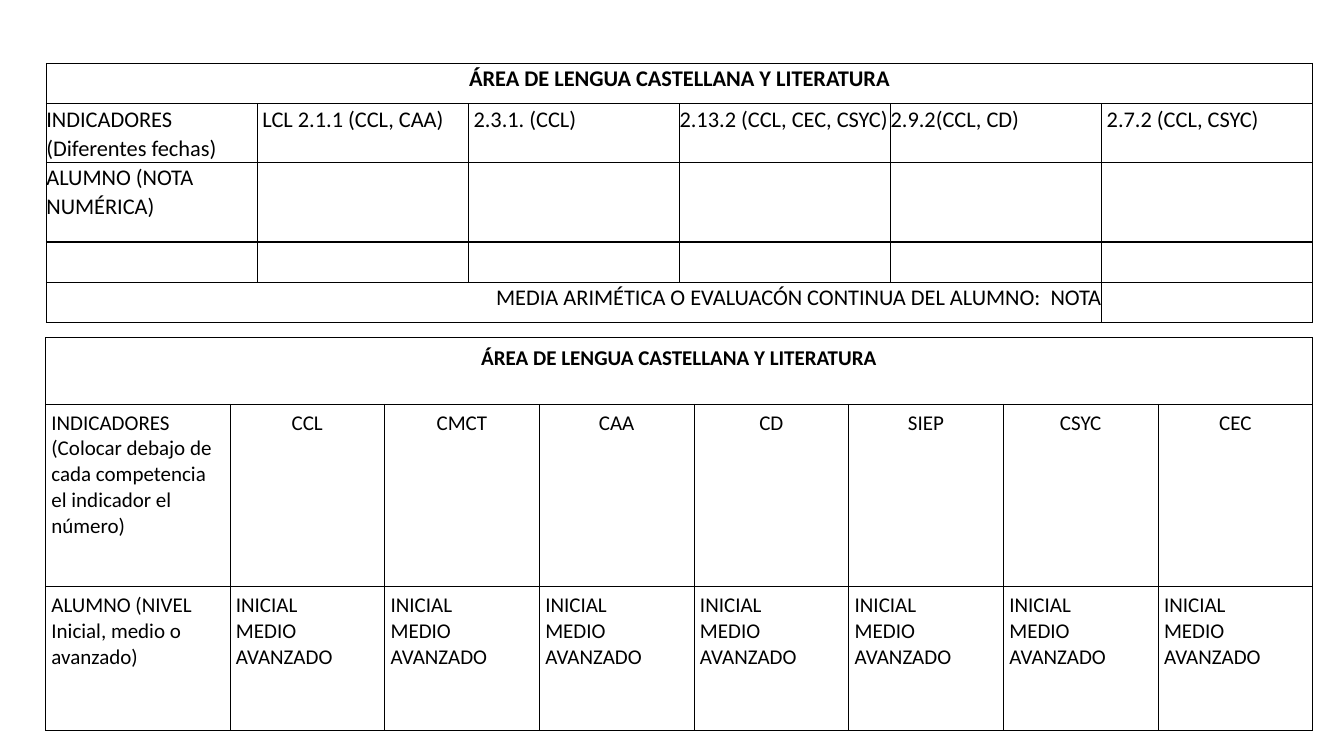
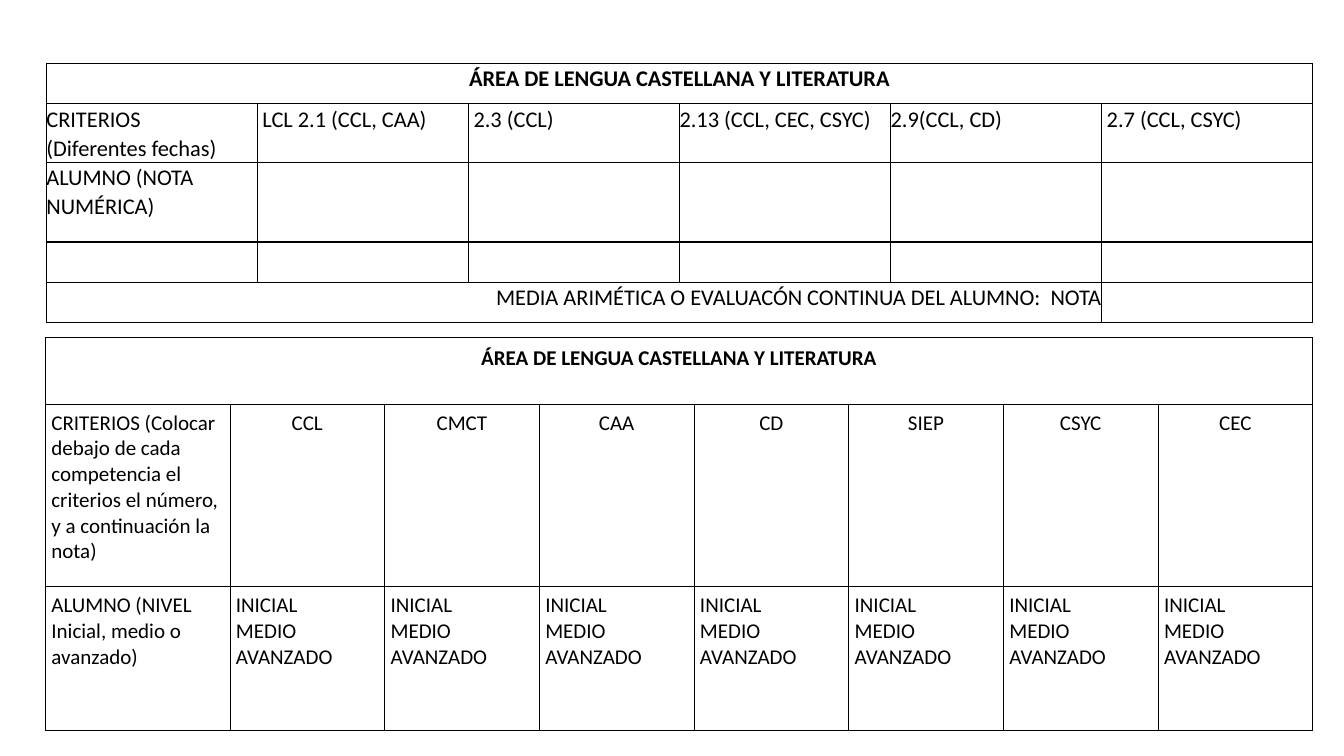
from copy import deepcopy

from lxml import etree
from pptx import Presentation
from pptx.dml.color import RGBColor
from pptx.enum.text import PP_ALIGN
from pptx.oxml.ns import qn
from pptx.util import Inches, Pt

LEFT, MID, RIGHT = PP_ALIGN.LEFT, PP_ALIGN.CENTER, PP_ALIGN.RIGHT
FONT, INK = "Calibri", "000000"
AREA = "ÁREA DE LENGUA CASTELLANA Y LITERATURA"
MEAN = "MEDIA ARIMÉTICA O EVALUACÓN CONTINUA DEL ALUMNO:  NOTA"
MARK = "ALUMNO (NOTA NUMÉRICA)"
LEVEL = "ALUMNO (NIVEL Inicial, medio o avanzado)"
STEPS = "INICIAL\nMEDIO\nAVANZADO"
SKILLS = ["CCL", "CMCT", "CAA", "CD", "SIEP", "CSYC", "CEC"]
INDENTS = [0, 0.05, 0.05, 0, 0, 0.05]

PAGES = [
    {
        "dates": "INDICADORES\n(Diferentes fechas)",
        "codes": ["LCL 2.1.1 (CCL, CAA)", "2.3.1. (CCL)", "2.13.2 (CCL, CEC, CSYC)",
                  "2.9.2(CCL, CD)", "2.7.2 (CCL, CSYC)"],
        "guide": "INDICADORES (Colocar debajo de cada competencia el indicador el número)",
    },
    {
        "dates": "CRITERIOS\n(Diferentes fechas)",
        "codes": ["LCL 2.1 (CCL, CAA)", "2.3 (CCL)", "2.13 (CCL, CEC, CSYC)",
                  "2.9(CCL, CD)", "2.7 (CCL, CSYC)"],
        "guide": "CRITERIOS (Colocar debajo de cada competencia el criterios el número, "
                 "y a continuación la nota)",
    },
]


def paint(color, value):
    color.rgb = RGBColor.from_string(value)


def write(cell, text, size=16, bold=False, align=LEFT, line=None, before=None):
    par = cell.text_frame.paragraphs[0]
    par.text = text
    par.alignment = align
    if line:
        par.line_spacing = line
    if before:
        par.space_before = Pt(before)
    for run in par.runs:
        run.font.name = FONT
        run.font.size = Pt(size)
        run.font.bold = bold
        paint(run.font.color, INK)
    for gap in par._p.findall(qn("a:br")):
        gap.insert(0, deepcopy(par.runs[0].font._element))


def border(cell, width):
    props = cell._tc.get_or_add_tcPr()
    for spot, side in enumerate(("lnL", "lnR", "lnT", "lnB")):
        edge = etree.Element(qn(f"a:{side}"), w=str(Pt(width)))
        fill = etree.SubElement(edge, qn("a:solidFill"))
        etree.SubElement(fill, qn("a:srgbClr"), val=INK)
        props.insert(spot, edge)


def add_grid(slide, left, top, cols, rows, width, inset):
    frame = slide.shapes.add_table(len(rows), len(cols), Inches(left), Inches(top),
                                   Inches(sum(cols)), Inches(sum(rows)))
    table = frame.table
    table.first_row = table.horz_banding = False
    for col, size in zip(table.columns, cols):
        col.width = Inches(size)
    for row, size in zip(table.rows, rows):
        row.height = Inches(size)
    for cell in table.iter_cells():
        cell.margin_left = cell.margin_right = Inches(inset)
        cell.margin_top = cell.margin_bottom = Inches(inset)
        cell.fill.background()
        border(cell, width)
    return table


def add_marks(slide, page):
    table = add_grid(slide, 0.46, 0.63, [12.56 / 6] * 6,
                     [0.4, 0.57, 0.79, 0.4, 0.4], 1, 0)
    table.cell(0, 0).merge(table.cell(0, 5))
    table.cell(4, 0).merge(table.cell(4, 4))
    write(table.cell(0, 0), AREA, bold=True, align=MID, line=1.07)
    for col, text in enumerate([page["dates"]] + page["codes"]):
        cell = table.cell(1, col)
        cell.margin_left = Inches(INDENTS[col])
        write(cell, text, line=1.07)
    write(table.cell(2, 0), MARK, line=1.07)
    write(table.cell(4, 0), MEAN, align=RIGHT, line=1.07)


def add_levels(slide, page):
    count = len(SKILLS)
    first = 1.83
    cols = [first] + [(12.57 - first) / count] * count
    table = add_grid(slide, 0.45, 3.35, cols, [0.66, 1.81, 1.43], 0.5, 0.06)
    table.cell(0, 0).merge(table.cell(0, count))
    write(table.cell(0, 0), AREA, size=15, bold=True, align=MID, line=1.08, before=8)
    write(table.cell(1, 0), page["guide"], size=15)
    write(table.cell(2, 0), LEVEL, size=15)
    for col, skill in enumerate(SKILLS, 1):
        write(table.cell(1, col), skill, size=15, align=MID)
        write(table.cell(2, col), STEPS, size=15)


def main():
    deck = Presentation()
    deck.slide_width, deck.slide_height = Inches(13.33), Inches(7.5)
    for page in PAGES:
        slide = deck.slides.add_slide(deck.slide_layouts[6])
        add_marks(slide, page)
        add_levels(slide, page)
    deck.save("out.pptx")


if __name__ == "__main__":
    main()
